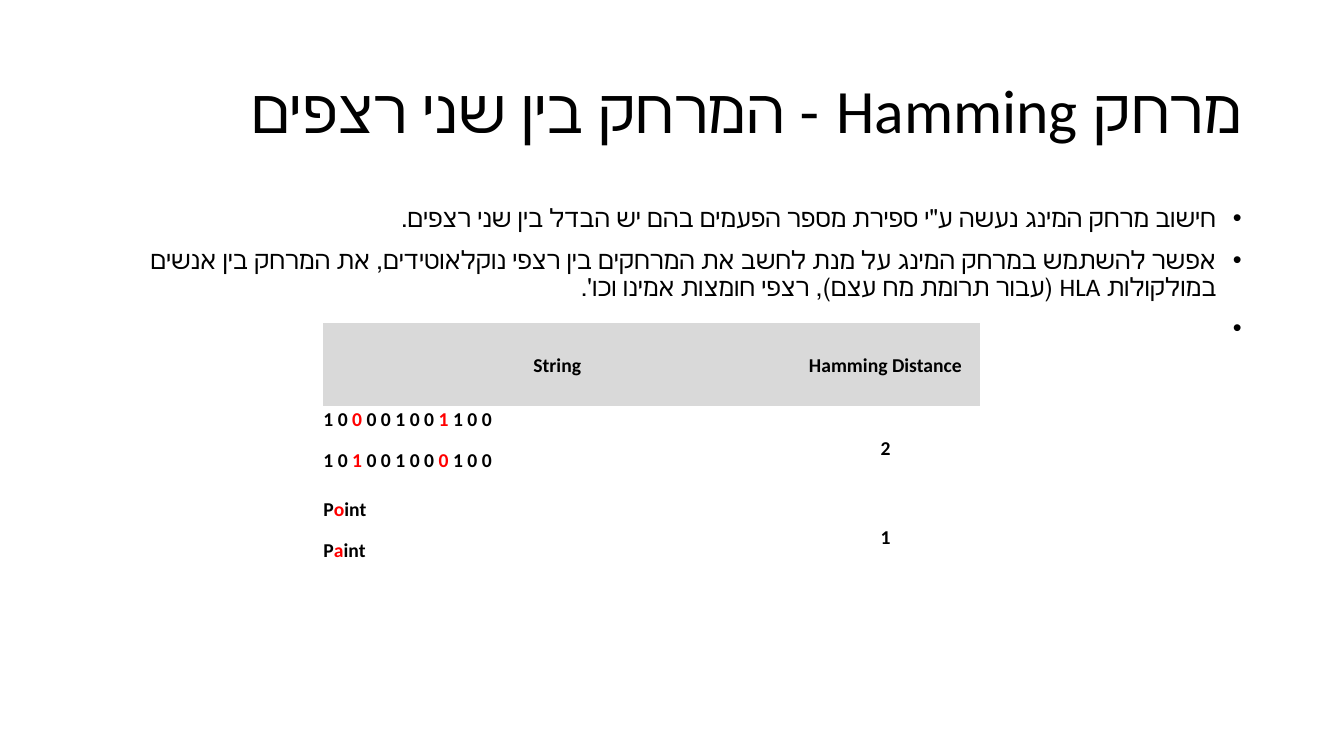
from pptx import Presentation
from pptx.dml.color import RGBColor
from pptx.enum.text import MSO_ANCHOR as Anchor, MSO_AUTO_SIZE as AutoSize, PP_ALIGN as Align
from pptx.oxml.ns import qn
from pptx.oxml.xmlchemy import OxmlElement
from pptx.util import Cm, Pt

COLORS = {"text": "000000", "difference": "FF0000", "header": "D9D9D9"}
FONT = "Calibri"
NO_GRID_STYLE = "{2D5ABB26-0587-4C30-8999-92F81FD0307C}"

TITLE = "מרחק Hamming - המרחק בין שני רצפים"
BULLETS = [
    "חישוב מרחק המינג נעשה ע\"י ספירת מספר הפעמים בהם יש הבדל בין שני רצפים. ",
    "אפשר להשתמש במרחק המינג על מנת לחשב את המרחקים בין רצפי נוקלאוטידים, "
    "את המרחק בין אנשים במולקולות HLA (עבור תרומת מח עצם), רצפי חומצות אמינו וכו'.",
    " ",
]
HEADERS = ["String", "Hamming Distance"]
# Bars enclose the symbols in which two strings differ.
STRINGS = {
    1: "1 0 |0| 0 0 1 0 0 |1| 1 0 0",
    2: "1 0 |1| 0 0 1 0 0 |0| 1 0 0",
    4: "P|o|int",
    5: "P|a|int",
}
DISTANCES = {1: "2", 4: "1"}
COLUMN_WIDTHS = [11.79, 4.75]
ROW_HEIGHTS = [2.11, 1.04, 1.04, 0.18, 1.04, 1.04]


def color(name):
    return RGBColor.from_string(COLORS[name])


class SlideBuilder:
    def __init__(self, deck):
        self.slide = deck.slides.add_slide(deck.slide_layouts[5])

    def format_paragraph(self, para, size, align, spacing, bold=False):
        para.alignment = align
        para.line_spacing = spacing
        para.font.name = FONT
        para.font.size = Pt(size)
        para.font.bold = bold
        para.font.color.rgb = color("text")

    def make_rtl(self, para):
        para.alignment = Align.RIGHT
        para._p.get_or_add_pPr().set("rtl", "1")

    def add_bullet(self, para):
        properties = para._p.get_or_add_pPr()
        properties.set("marL", str(Cm(0.64)))
        properties.set("indent", str(-Cm(0.64)))
        font = OxmlElement("a:buFont")
        font.set("typeface", "Arial")
        bullet = OxmlElement("a:buChar")
        bullet.set("char", "•")
        defaults = properties.find(qn("a:defRPr"))
        defaults.addprevious(font)
        defaults.addprevious(bullet)

    def title(self, text, left, top, width, height):
        box = self.slide.shapes.title
        box.left, box.top, box.width, box.height = map(Cm, (left, top, width, height))
        frame = box.text_frame
        frame.text = text
        frame.auto_size = AutoSize.NONE
        frame.vertical_anchor = Anchor.MIDDLE
        para = frame.paragraphs[0]
        self.format_paragraph(para, 44, Align.RIGHT, 0.9)
        self.make_rtl(para)

    def bullets(self, texts, left, top, width, height):
        box = self.slide.shapes.add_textbox(*map(Cm, (left, top, width, height)))
        frame = box.text_frame
        frame.word_wrap = True
        frame.text = "\n".join(texts)
        for para in frame.paragraphs:
            self.format_paragraph(para, 18, Align.RIGHT, 0.9)
            para.space_before = Pt(10)
            self.make_rtl(para)
            self.add_bullet(para)

    def table(self, left, top, widths, heights):
        frame = self.slide.shapes.add_table(
            len(heights), len(widths), Cm(left), Cm(top), Cm(sum(widths)), Cm(sum(heights)))
        table = frame.table
        table.first_row = table.horz_banding = False
        table._tbl.tblPr.find(qn("a:tableStyleId")).text = NO_GRID_STYLE
        for column, width in zip(table.columns, widths):
            column.width = Cm(width)
        for row, height in zip(table.rows, heights):
            row.height = Cm(height)
        for cell in table.iter_cells():
            cell.margin_left = cell.margin_right = cell.margin_top = cell.margin_bottom = 0
            cell.fill.background()
        return table

    def cell(self, cell, text, align=Align.CENTER, anchor=Anchor.MIDDLE):
        """Fill a cell, with the parts between bars in the difference colour."""
        cell.vertical_anchor = anchor
        para = cell.text_frame.paragraphs[0]
        self.format_paragraph(para, 14, align, 1.07, bold=True)
        para.space_after = Pt(8)
        for index, part in enumerate(text.split("|")):
            span = para.add_run()
            span.text = part
            if index % 2:
                span.font.color.rgb = color("difference")

    def shrink_empty_cell(self, cell):
        """Give the empty line a tiny font so that it does not stretch its row."""
        end = OxmlElement("a:endParaRPr")
        end.set("sz", "100")
        cell.text_frame.paragraphs[0]._p.append(end)


def main():
    deck = Presentation()
    deck.slide_width, deck.slide_height = Cm(33.87), Cm(19.05)
    builder = SlideBuilder(deck)
    builder.title(TITLE, 2.33, 1.01, 29.21, 3.68)
    builder.bullets(BULLETS, 2.33, 5.07, 29.21, 12.09)

    table = builder.table(8.15, 8.13, COLUMN_WIDTHS, ROW_HEIGHTS)
    for column, header in enumerate(HEADERS):
        cell = table.cell(0, column)
        builder.cell(cell, header)
        cell.fill.solid()
        cell.fill.fore_color.rgb = color("header")
        builder.shrink_empty_cell(table.cell(3, column))
    for row, text in STRINGS.items():
        builder.cell(table.cell(row, 0), text, Align.LEFT, Anchor.TOP)
    for row, distance in DISTANCES.items():
        table.cell(row, 1).merge(table.cell(row + 1, 1))
        builder.cell(table.cell(row, 1), distance)
    deck.save("out.pptx")


if __name__ == "__main__":
    main()
